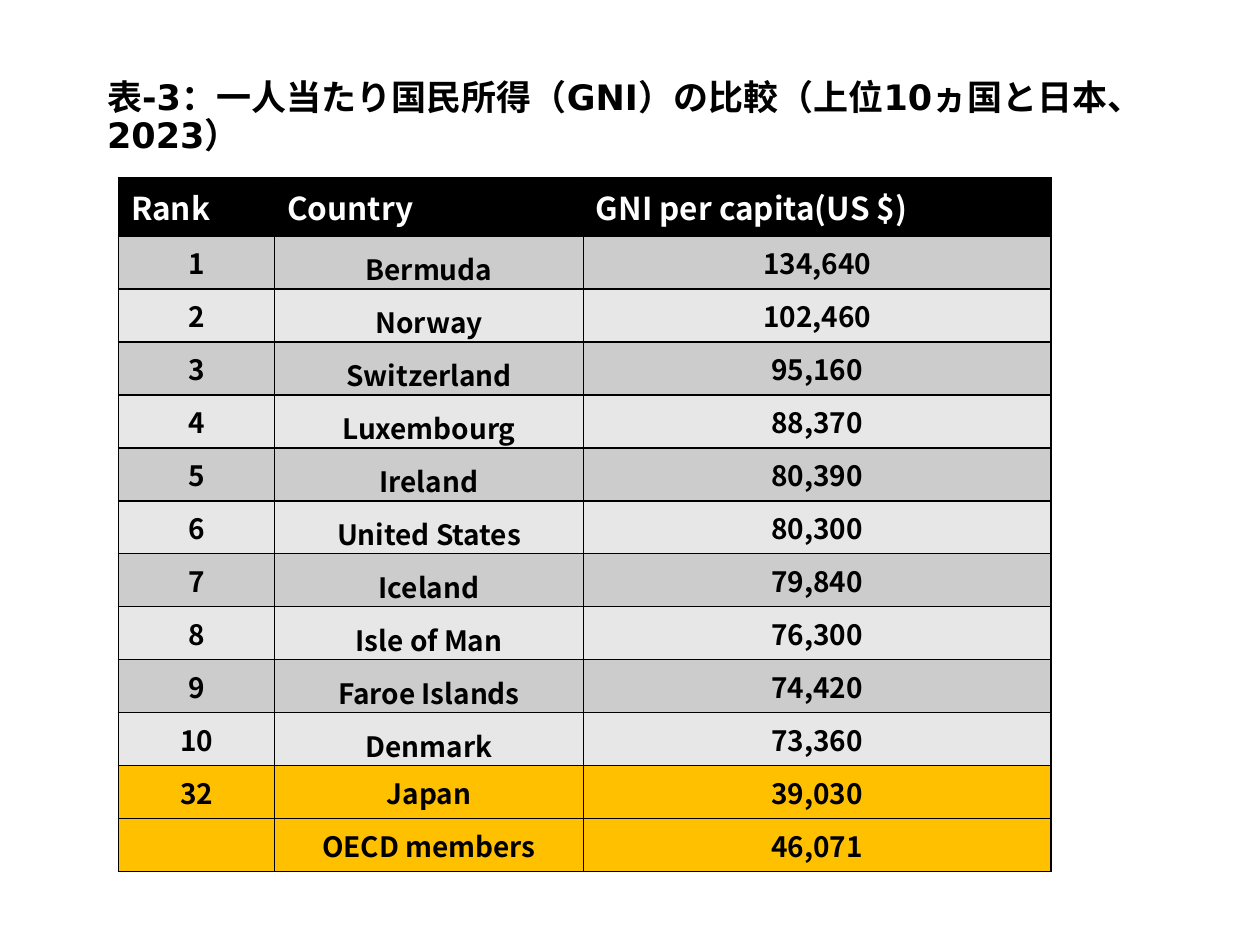
from dataclasses import dataclass

from lxml import etree
from pptx import Presentation
from pptx.dml.color import RGBColor
from pptx.enum.text import MSO_ANCHOR, MSO_AUTO_SIZE, PP_ALIGN
from pptx.oxml.ns import qn
from pptx.util import Inches, Pt

LEFT, CENTER = PP_ALIGN.LEFT, PP_ALIGN.CENTER
TOP, MIDDLE, BOTTOM = MSO_ANCHOR.TOP, MSO_ANCHOR.MIDDLE, MSO_ANCHOR.BOTTOM


@dataclass(frozen=True)
class Theme:
    title_font: str = "DejaVu Sans"
    table_font: str = "Noto Sans CJK JP"
    title_size: int = 20
    header_size: int = 18
    cell_size: int = 16
    ink: str = "000000"
    paper: str = "FFFFFF"
    bands: tuple[str, str] = ("CCCCCC", "E7E7E7")
    highlight: str = "FFC000"
    border_width: int = 1


@dataclass(frozen=True)
class CountryRow:
    rank: str
    country: str
    gni: str
    highlighted: bool = False


THEME = Theme()
TITLE = "表-3：一人当たり国民所得（GNI）の比較（上位10ヵ国と日本、2023）"
HEADERS = ("Rank", "Country", "GNI per capita(US $)")
ROWS = (
    CountryRow("1", "Bermuda", "134,640"),
    CountryRow("2", "Norway", "102,460"),
    CountryRow("3", "Switzerland", "95,160"),
    CountryRow("4", "Luxembourg", "88,370"),
    CountryRow("5", "Ireland", "80,390"),
    CountryRow("6", "United States", "80,300"),
    CountryRow("7", "Iceland", "79,840"),
    CountryRow("8", "Isle of Man", "76,300"),
    CountryRow("9", "Faroe Islands", "74,420"),
    CountryRow("10", "Denmark", "73,360"),
    CountryRow("32", "Japan", "39,030", True),
    CountryRow("", "OECD members", "46,071", True),
)
COLUMN_WIDTHS = (1.24, 2.45, 3.71)
HEADER_HEIGHT, ROW_HEIGHT = 0.37, 0.34


def add_run(p, text: str, font: str, size: int, color: str) -> None:
    r = p.add_run()
    r.text = text
    r.font.name = font
    r.font.size = Pt(size)
    r.font.bold = True
    r.font.color.rgb = RGBColor.from_string(color)


def set_borders(cell) -> None:
    """Line all four sides; the lines must precede the fill in the cell properties."""
    tc_pr = cell._tc.get_or_add_tcPr()
    for i, side in enumerate(("a:lnL", "a:lnR", "a:lnT", "a:lnB")):
        ln = etree.Element(qn(side), w=str(Pt(THEME.border_width)))
        fill = etree.SubElement(ln, qn("a:solidFill"))
        etree.SubElement(fill, qn("a:srgbClr"), val=THEME.ink)
        tc_pr.insert(i, ln)


def fill_cell(cell, text: str, fill: str, size: int = THEME.cell_size,
              color: str = THEME.ink, align=CENTER, anchor=TOP) -> None:
    cell.fill.solid()
    cell.fill.fore_color.rgb = RGBColor.from_string(fill)
    cell.vertical_anchor = anchor
    if anchor == BOTTOM:
        cell.margin_left = cell.margin_right = cell.margin_top = Inches(0.01)
        cell.margin_bottom = 0
    set_borders(cell)
    if text:
        p = cell.text_frame.paragraphs[0]
        p.alignment = align
        add_run(p, text, THEME.table_font, size, color)


def add_title(s) -> None:
    sp = s.shapes.title
    sp.left, sp.top, sp.width, sp.height = map(Inches, (0.75, 0.43, 8.35, 1.02))
    tf = sp.text_frame
    tf.word_wrap = True
    tf.auto_size = MSO_AUTO_SIZE.NONE
    tf.vertical_anchor = MIDDLE
    p = tf.paragraphs[0]
    p.alignment = LEFT
    p.line_spacing = 0.9
    add_run(p, TITLE, THEME.title_font, THEME.title_size, THEME.ink)


def add_gni_table(s) -> None:
    height = HEADER_HEIGHT + ROW_HEIGHT * len(ROWS)
    frame = s.shapes.add_table(len(ROWS) + 1, len(HEADERS), Inches(0.94), Inches(1.41),
                               Inches(sum(COLUMN_WIDTHS)), Inches(height))
    table = frame.table
    for column, width in zip(table.columns, COLUMN_WIDTHS):
        column.width = Inches(width)
    for i, row in enumerate(table.rows):
        row.height = Inches(ROW_HEIGHT if i else HEADER_HEIGHT)

    for c, header in enumerate(HEADERS):
        fill_cell(table.cell(0, c), header, THEME.ink, THEME.header_size, THEME.paper, LEFT)
    for i, row in enumerate(ROWS):
        fill = THEME.highlight if row.highlighted else THEME.bands[i % 2]
        country_anchor = TOP if row.highlighted else BOTTOM
        fill_cell(table.cell(i + 1, 0), row.rank, fill)
        fill_cell(table.cell(i + 1, 1), row.country, fill, anchor=country_anchor)
        fill_cell(table.cell(i + 1, 2), row.gni, fill)


def main() -> None:
    prs = Presentation()
    prs.slide_width, prs.slide_height = Inches(10), Inches(7.5)
    s = prs.slides.add_slide(prs.slide_layouts.get_by_name("Title Only"))
    add_title(s)
    add_gni_table(s)
    prs.save("out.pptx")


if __name__ == "__main__":
    main()
